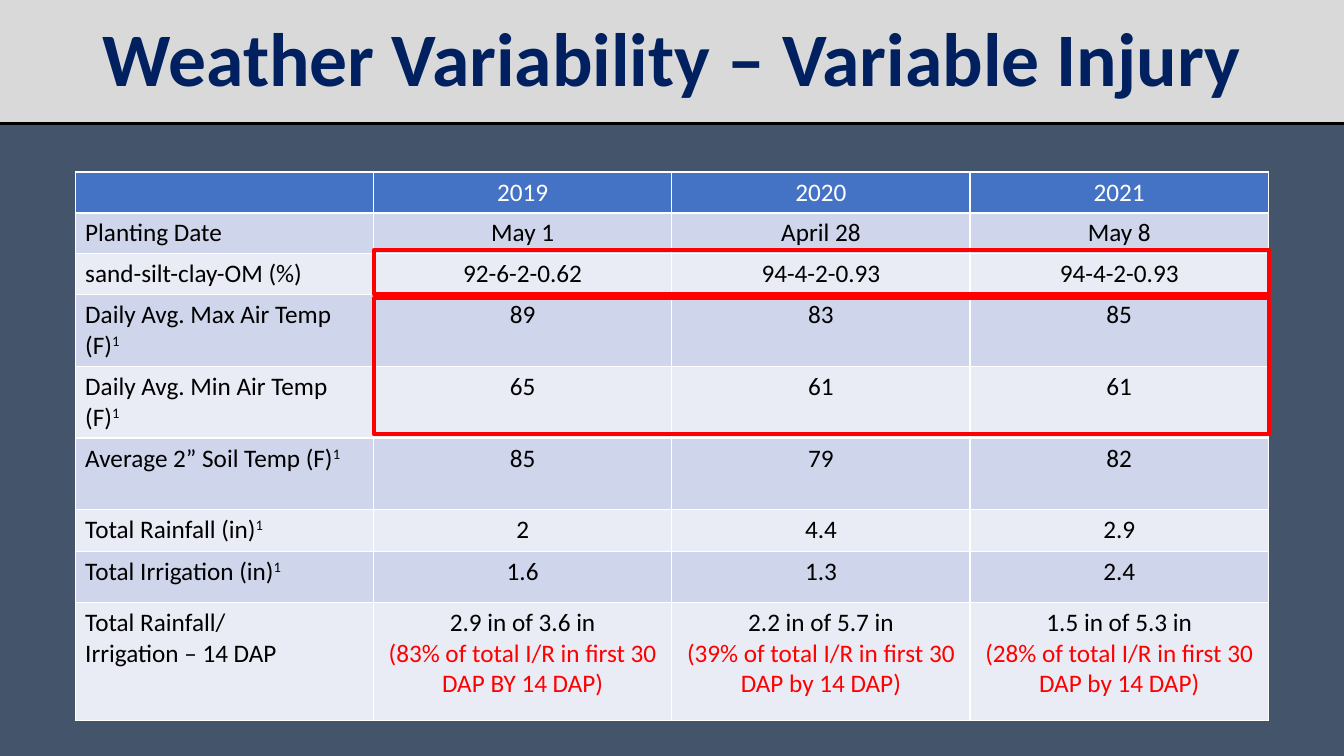
from pptx import Presentation
from pptx.dml.color import RGBColor
from pptx.enum.shapes import MSO_CONNECTOR, MSO_SHAPE
from pptx.enum.text import MSO_ANCHOR, MSO_AUTO_SIZE, PP_ALIGN
from pptx.oxml.ns import qn
from pptx.util import Pt

STRAIGHT = MSO_CONNECTOR.STRAIGHT
RECTANGLE = MSO_SHAPE.RECTANGLE
MIDDLE = MSO_ANCHOR.MIDDLE
NO_AUTOFIT = MSO_AUTO_SIZE.NONE
LEFT, CENTER = PP_ALIGN.LEFT, PP_ALIGN.CENTER

FONT = "Calibri"
COLORS = {
    "background": "44546A",
    "banner": "D9D9D9",
    "title": "002060",
    "header": "4472C4",
    "odd row": "CFD5EA",
    "even row": "E9EBF5",
    "white": "FFFFFF",
    "black": "000000",
    "red": "FF0000",
}


def color(name):
    return RGBColor.from_string(COLORS[name])


def add_run(paragraph, text, size, color_name, bold=False):
    run = paragraph.add_run()
    run.text = text
    run.font.name = FONT
    run.font.size = Pt(size)
    run.font.bold = bold
    run.font.color.rgb = color(color_name)
    return run


WIDTH, HEIGHT = 960, 540
BANNER_HEIGHT = 88.4

prs = Presentation()
prs.slide_width, prs.slide_height = Pt(WIDTH), Pt(HEIGHT)
slide = prs.slides.add_slide(prs.slide_layouts[5])
slide.background.fill.solid()
slide.background.fill.fore_color.rgb = color("background")

# Title banner
title = slide.shapes.title
title.left, title.top, title.width, title.height = Pt(0), Pt(0), Pt(WIDTH), Pt(BANNER_HEIGHT)
title.fill.solid()
title.fill.fore_color.rgb = color("banner")
title.text_frame.auto_size = NO_AUTOFIT
title.text_frame.word_wrap = True
title.text_frame.vertical_anchor = MIDDLE
heading = title.text_frame.paragraphs[0]
heading.alignment = CENTER
heading.line_spacing = 0.9
add_run(heading, "Weather Variability – Variable Injury", 54, "title", bold=True)

# Rule under the banner
rule = slide.shapes.add_connector(STRAIGHT, Pt(0), Pt(BANNER_HEIGHT), Pt(WIDTH), Pt(BANNER_HEIGHT))
rule.line.color.rgb = color("black")
rule.line.width = Pt(2.25)
rule_properties = rule._element.spPr
rule_properties.append(rule_properties.makeelement(qn("a:effectLst"), {}))

# Weather table: a line break starts a paragraph, ^ marks a superscript
weather = [
    ["", "2019", "2020", "2021"],
    ["Planting Date", "May 1", "April 28", "May 8"],
    ["sand-silt-clay-OM (%)", "92-6-2-0.62", "94-4-2-0.93", "94-4-2-0.93"],
    ["Daily Avg. Max Air Temp (F)^1", "89", "83", "85"],
    ["Daily Avg. Min Air Temp (F)^1", "65", "61", "61"],
    ["Average 2” Soil Temp (F)^1", "85", "79", "82"],
    ["Total Rainfall (in)^1", "2", "4.4", "2.9"],
    ["Total Irrigation (in)^1", "1.6", "1.3", "2.4"],
    ["Total Rainfall/\nIrrigation – 14 DAP",
     "2.9 in of 3.6 in\n(83% of total I/R in first 30 DAP BY 14 DAP)",
     "2.2 in of 5.7 in\n(39% of total I/R in first 30 DAP by 14 DAP)",
     "1.5 in of 5.3 in\n(28% of total I/R in first 30 DAP by 14 DAP)"],
]
row_heights = [29.2, 29.2, 29.2, 51, 51, 51, 29.9, 36.5, 84.3]
COLUMN_WIDTH = 213.1

table = slide.shapes.add_table(
    len(weather), len(weather[0]), Pt(53.7), Pt(122.9),
    Pt(4 * COLUMN_WIDTH), Pt(sum(row_heights))).table
for column in table.columns:
    column.width = Pt(COLUMN_WIDTH)

for r, (entries, row_height) in enumerate(zip(weather, row_heights)):
    table.rows[r].height = Pt(row_height)
    band = "header" if r == 0 else "odd row" if r % 2 else "even row"
    for c, entry in enumerate(entries):
        cell = table.cell(r, c)
        cell.fill.solid()
        cell.fill.fore_color.rgb = color(band)
        for n, line in enumerate(entry.split("\n")):
            paragraph = cell.text_frame.paragraphs[0] if n == 0 else cell.text_frame.add_paragraph()
            paragraph.alignment = CENTER if c else LEFT
            ink = "white" if r == 0 else "red" if line.startswith("(") else "black"
            words, _, footnote = line.partition("^")
            add_run(paragraph, words, 18, ink)
            if footnote:
                mark = add_run(paragraph, footnote, 18, ink)
                mark.font._element.set("baseline", "30000")

# Red frames around the soil and air temperature rows
for frame_top, frame_height in [(178.6, 31.7), (213.1, 97.2)]:
    frame = slide.shapes.add_shape(RECTANGLE, Pt(267.1), Pt(frame_top), Pt(639.4), Pt(frame_height))
    frame.shadow.inherit = False
    frame.fill.background()
    frame.line.color.rgb = color("red")
    frame.line.width = Pt(3)

prs.save("out.pptx")
